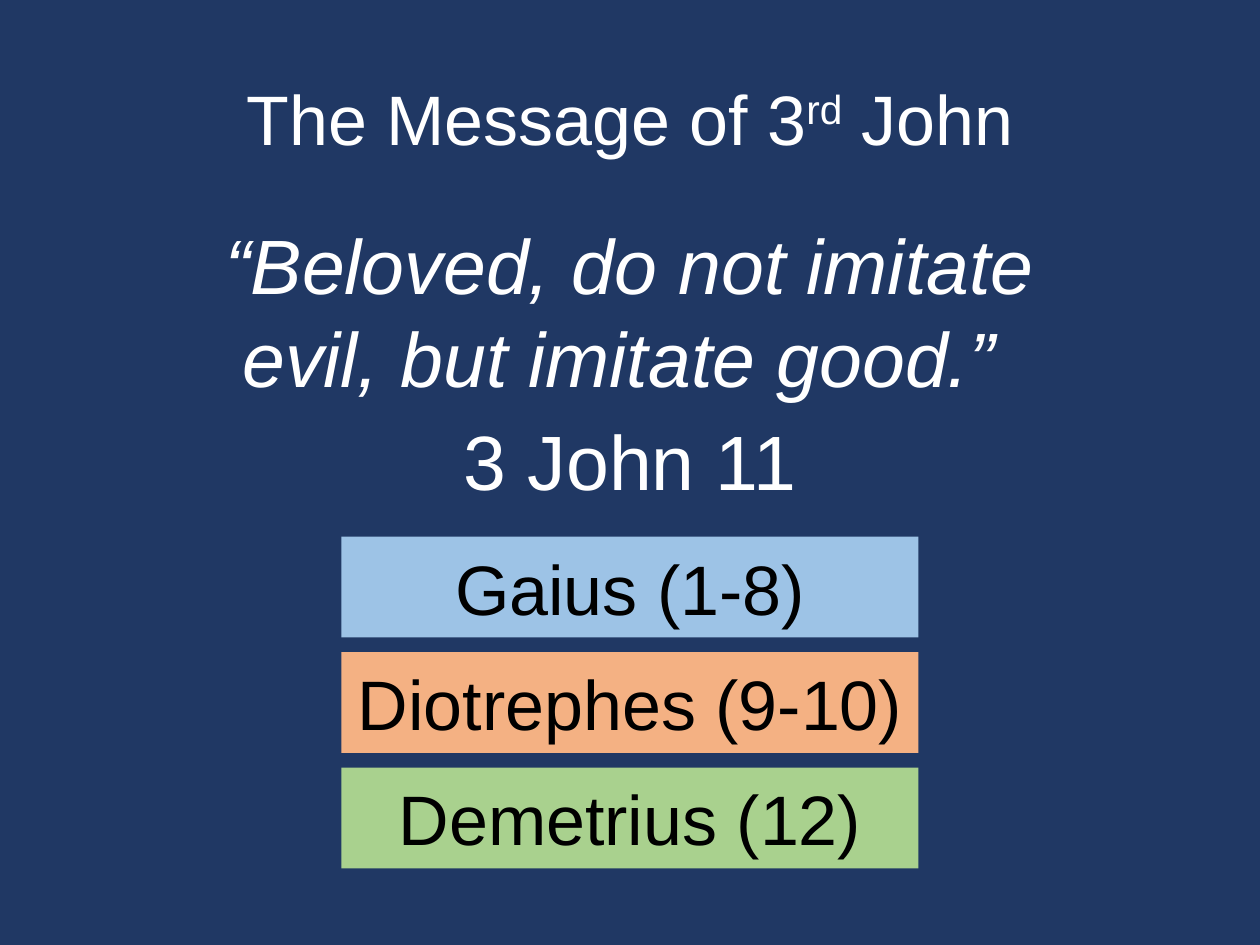
from pptx import Presentation
from pptx.dml.color import RGBColor
from pptx.enum.shapes import MSO_SHAPE
from pptx.enum.text import MSO_ANCHOR, PP_ALIGN
from pptx.util import Inches, Pt

NAVY = RGBColor(0x20, 0x38, 0x64)
WHITE = RGBColor(0xFF, 0xFF, 0xFF)
BLACK = RGBColor(0x00, 0x00, 0x00)
BLUE = RGBColor(0x9D, 0xC3, 0xE6)
ORANGE = RGBColor(0xF4, 0xB1, 0x83)
GREEN = RGBColor(0xA9, 0xD1, 0x8E)
RECTANGLE = MSO_SHAPE.RECTANGLE
CENTER = PP_ALIGN.CENTER
MIDDLE = MSO_ANCHOR.MIDDLE


def add_run(p, text, color, **formats):
    r = p.add_run()
    r.text = text
    r.font.color.rgb = color
    for name, value in {"name": "Arial", "size": Pt(40), **formats}.items():
        setattr(r.font, name, value)
    return r


prs = Presentation()
prs.slide_width, prs.slide_height = Inches(10), Inches(7.5)
s = prs.slides.add_slide(prs.slide_layouts[5])
s.background.fill.solid()
s.background.fill.fore_color.rgb = NAVY

# Title with a superscript ordinal
title = s.shapes.title
title.left, title.top = Inches(0.69), Inches(0.23)
title.width, title.height = Inches(8.62), Inches(1.49)
title.text_frame.vertical_anchor = MIDDLE
p = title.text_frame.paragraphs[0]
p.alignment, p.line_spacing = CENTER, 0.9
add_run(p, "The Message of 3", WHITE)
ordinal = add_run(p, "rd", WHITE)
ordinal._r.get_or_add_rPr().set("baseline", "30000")
add_run(p, " John", WHITE)

# Quotation and its reference
quote = s.shapes.add_textbox(Inches(1.27), Inches(1.68), Inches(7.46), Inches(2.41))
tf = quote.text_frame
tf.word_wrap = True
verse, reference = tf.paragraphs[0], tf.add_paragraph()
for p in (verse, reference):
    p.alignment, p.space_after = CENTER, Pt(6)
add_run(verse, "“Beloved, do not imitate evil, but imitate good.” ", WHITE,
        size=Pt(44), italic=True)
add_run(reference, "3 John 11", WHITE, size=Pt(44))

# One bar for each person in the letter
people = [("Gaius (1-8)", BLUE), ("Diotrephes (9-10)", ORANGE), ("Demetrius (12)", GREEN)]
for i, (person, color) in enumerate(people):
    bar = s.shapes.add_shape(RECTANGLE, Inches(2.71), Inches(4.26 + 0.916 * i),
                             Inches(4.58), Inches(0.8))
    bar.shadow.inherit = False
    bar.fill.solid()
    bar.fill.fore_color.rgb = color
    bar.line.fill.background()
    tf = bar.text_frame
    tf.word_wrap, tf.vertical_anchor = True, MIDDLE
    p = tf.paragraphs[0]
    p.alignment = CENTER
    add_run(p, person, BLACK)

prs.save("out.pptx")
